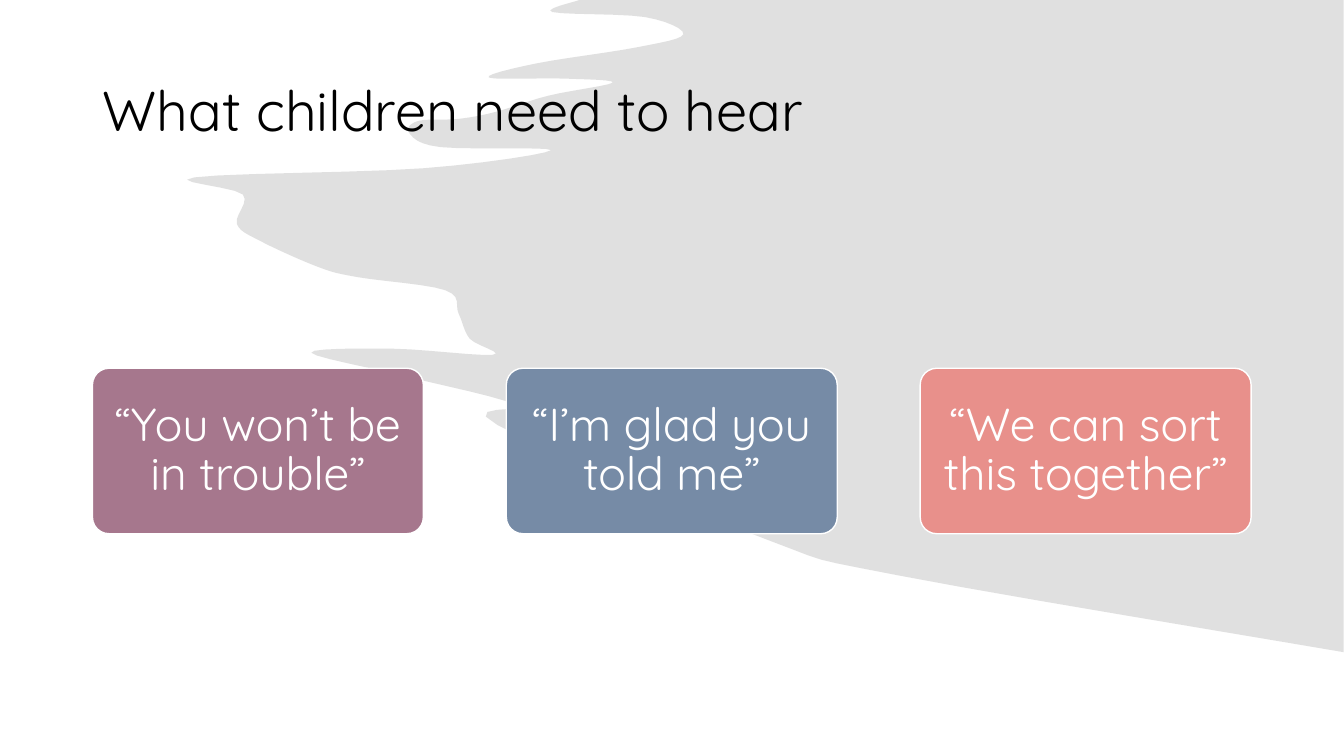
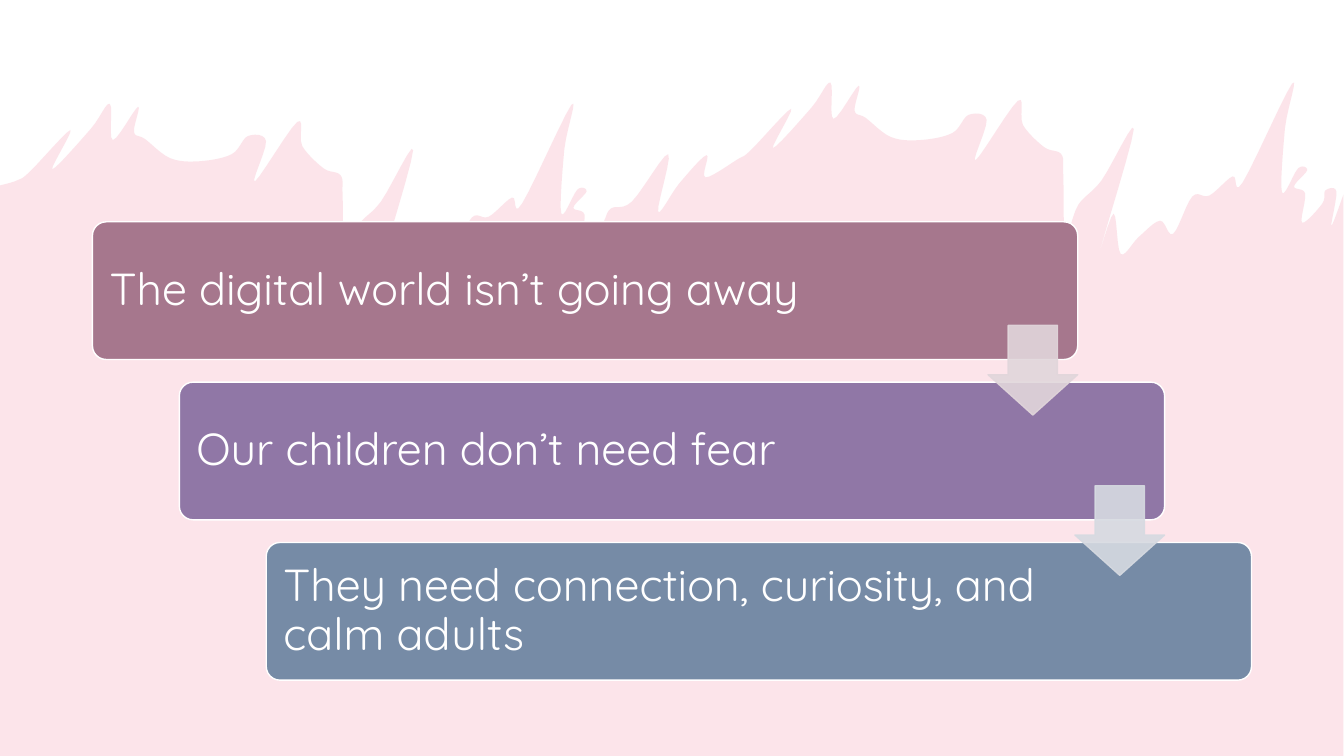
from lxml import etree
from pptx import Presentation
from pptx.dml.color import RGBColor
from pptx.enum.shapes import MSO_SHAPE
from pptx.enum.text import MSO_ANCHOR, MSO_AUTO_SIZE, PP_ALIGN
from pptx.oxml.ns import qn
from pptx.util import Cm, Pt

ROUND, ARROW = MSO_SHAPE.ROUNDED_RECTANGLE, MSO_SHAPE.DOWN_ARROW
LEFT, MID = PP_ALIGN.LEFT, PP_ALIGN.CENTER
MIDDLE, FIXED = MSO_ANCHOR.MIDDLE, MSO_AUTO_SIZE.NONE

FONT = "Quicksand"
BLACK = RGBColor(0x00, 0x00, 0x00)
WHITE = RGBColor(0xFF, 0xFF, 0xFF)
GREY = RGBColor(0xD9, 0xD9, 0xD9)
PINK = RGBColor(0xF0, 0x7C, 0x98)
MAUVE = RGBColor(0xA6, 0x77, 0x8D)
PLUM = RGBColor(0x90, 0x77, 0xA6)
BLUE = RGBColor(0x76, 0x8B, 0xA6)
CORAL = RGBColor(0xE8, 0x90, 0x8B)
ROSE = RGBColor(0xE1, 0xD6, 0xDB)
MIST = RGBColor(0xD6, 0xDA, 0xE1)

UNIT = Cm(0.0254)  # outline grid
STEPS = 6          # straight pieces between two points

# Brush edges, smoothed when drawn
SMEAR = [
    (575, 0), (548, 12), (640, 17), (678, 34), (632, 47), (532, 63),
    (485, 77), (560, 78), (608, 82), (544, 95), (492, 111), (455, 118),
    (415, 120), (406, 132), (437, 146), (547, 149), (420, 167), (193, 176),
    (241, 193), (235, 222), (258, 239), (316, 265), (355, 275), (442, 288),
    (455, 311), (466, 336), (489, 352), (390, 346), (309, 350), (405, 374),
    (512, 402), (494, 422), (760, 535), (892, 571), (1333, 647)]
WAVE = [
    (17, 179), (30, 170), (70, 129), (52, 168), (90, 128), (109, 103),
    (112, 139), (137, 106), (133, 131), (144, 138), (169, 157), (198, 160),
    (230, 153), (246, 135), (264, 140), (253, 180), (295, 121), (300, 145),
    (321, 167), (338, 174), (340, 194), (342, 255), (355, 224), (378, 200),
    (410, 149), (376, 271), (390, 233), (397, 273), (415, 256), (436, 240),
    (449, 253), (468, 216), (485, 215), (508, 196), (518, 202), (567, 104),
    (560, 148), (557, 212), (573, 188), (582, 190), (569, 206), (580, 213),
    (577, 242), (597, 223)]
BRIDGE = [(606, 207), (627, 200), (663, 153), (653, 210), (674, 182),
          (701, 154), (700, 176)]
TAIL = [(1315, 189), (1326, 190), (1321, 224), (1333, 193)]
AGAIN = [(x + 715, y - 21) for x, y in WAVE]  # the wave shows twice
SKY = [(0, 184)] + WAVE + BRIDGE + AGAIN + TAIL


def paint(shape, fill, line=None, alpha=100):
    shape.shadow.inherit = False
    shape.fill.solid()
    shape.fill.fore_color.rgb = fill
    if line is None:
        shape.line.fill.background()
    else:
        shape.line.color.rgb = line
        shape.line.width = Pt(1)
    if alpha < 100:
        for tint in shape.element.spPr.iter(qn("a:srgbClr")):
            etree.SubElement(tint, qn("a:alpha")).set("val", str(alpha * 1000))


def blot(slide, edge, ends, fill, alpha):
    # Catmull-Rom curve through the edge, then straight to the ends
    pts = [edge[0]] + edge + [edge[-1]]
    dots = [edge[0]]
    for a, b, c, d in zip(pts, pts[1:], pts[2:], pts[3:]):
        for k in range(1, STEPS + 1):
            t = k / STEPS
            dots.append(tuple(
                q + t / 2 * (r - p + t * (2 * p - 5 * q + 4 * r - s
                                          + t * (3 * q - p - 3 * r + s)))
                for p, q, r, s in zip(a, b, c, d)))
    dots = [(x * UNIT, y * UNIT) for x, y in dots + ends]
    form = slide.shapes.build_freeform(*dots[0])
    form.add_line_segments(dots[1:], close=True)
    shape = form.convert_to_shape()
    paint(shape, fill, alpha=alpha)
    return shape


deck = Presentation()
deck.slide_width, deck.slide_height = Cm(33.87), Cm(19.05)
hear = deck.slides.add_slide(deck.slide_layouts[5])
calm = deck.slides.add_slide(deck.slide_layouts[6])

# Brush backdrops
smear = blot(hear, SMEAR, [(1333, 0)], GREY, 80)
blot(calm, SKY, [(1333, 750), (0, 750)], PINK, 20)

# Title, in front of the smear
title = hear.shapes.title
title.element.addprevious(smear.element)
title.left, title.top = Cm(2.33), Cm(1.01)
title.width, title.height = Cm(29.21), Cm(3.68)
title.text = "What children need to hear"
frame = title.text_frame
frame.auto_size = FIXED
frame.vertical_anchor = MIDDLE
para = frame.paragraphs[0]
para.alignment, para.line_spacing = LEFT, 0.9
para.font.name, para.font.size = FONT, Pt(40)
para.font.color.rgb = BLACK

# Cards in a row, then bars in a staircase
sets = [
    # slide, start, step, size, insets (left, top, right), align, points, items
    (hear, (2.33, 9.28), (10.43, 0), (8.34, 4.17), (0.18, 0.13, 0.18), MID, 33,
     [("“You won’t be in trouble”", MAUVE),
      ("“I’m glad you told me”", BLUE),
      ("“We can sort this together”", CORAL)]),
    (calm, (2.33, 5.59), (2.19, 4.04), (24.83, 3.47), (0.33, 0.33, 4.78), LEFT, 32,
     [("The digital world isn’t going away", MAUVE),
      ("Our children don’t need fear", PLUM),
      ("They need connection, curiosity, and calm adults", BLUE)]),
]
for slide, (x, y), (dx, dy), (w, h), inset, align, size, items in sets:
    for i, (text, fill) in enumerate(items):
        box = slide.shapes.add_shape(
            ROUND, Cm(x + i * dx), Cm(y + i * dy), Cm(w), Cm(h))
        box.adjustments[0] = 0.1
        paint(box, fill, WHITE)
        frame = box.text_frame
        frame.word_wrap = True
        frame.vertical_anchor = MIDDLE
        frame.margin_left, frame.margin_top, frame.margin_right = map(Cm, inset)
        frame.margin_bottom = frame.margin_top
        para = frame.paragraphs[0]
        para.text = text
        para.alignment, para.line_spacing = align, 0.9
        para.font.name, para.font.size = FONT, Pt(size)
        para.font.color.rgb = WHITE

# Arrows between the bars
for i, fill in enumerate((ROSE, MIST)):
    arrow = calm.shapes.add_shape(
        ARROW, Cm(24.9 + i * 2.19), Cm(8.2 + i * 4.04), Cm(2.26), Cm(2.26))
    arrow.adjustments[0], arrow.adjustments[1] = 0.55, 0.45
    paint(arrow, fill, fill, 90)

deck.save("out.pptx")
